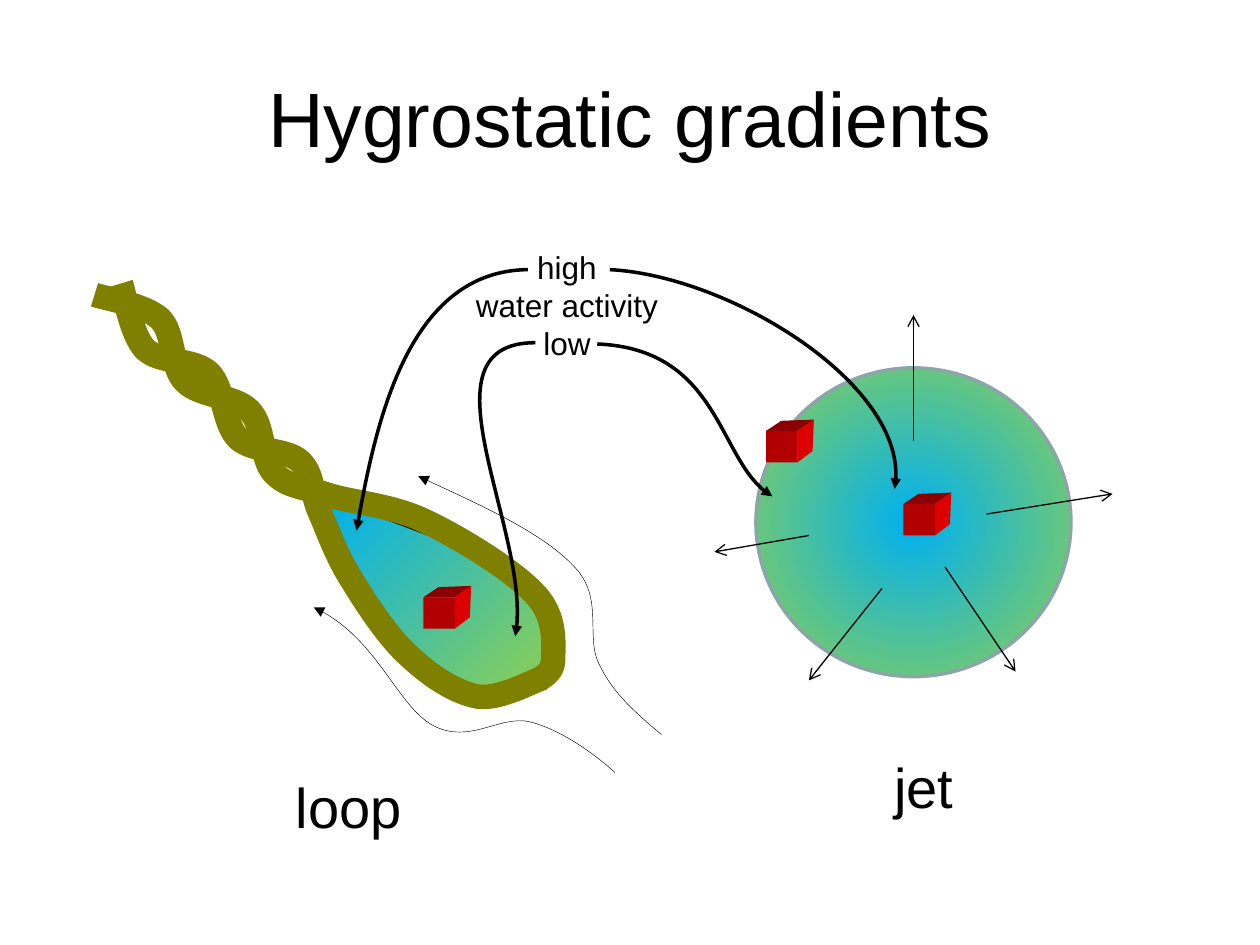
from dataclasses import dataclass
from typing import Optional

from pptx import Presentation
from pptx.dml.color import RGBColor
from pptx.enum.shapes import MSO_CONNECTOR as Connector, MSO_SHAPE as Preset
from pptx.enum.text import MSO_ANCHOR as Anchor, MSO_AUTO_SIZE as AutoSize, PP_ALIGN as Align
from pptx.oxml import parse_xml
from pptx.oxml.ns import nsdecls, qn
from pptx.oxml.xmlchemy import OxmlElement
from pptx.util import Inches, Pt

# Grid of 10 columns by 7.5 rows with square cells
COLUMNS, ROWS = 10, 7.5
CELL = Inches(1)
FONT = "Arial"
BLACK, ROPE, RIM = "000000", "808000", "8AA6A8"
WET, DRY = "00B0F0", "92D050"
CUBE_SIDE = 0.25


@dataclass
class Curve:
    """A start point followed by cubic segments, three points each."""
    points: list
    width: float
    colour: str = BLACK
    head: Optional[str] = None
    closed: bool = False


@dataclass
class Face:
    colour: str
    corners: list


def cells(count: float) -> int:
    return round(count * CELL)


def paint(colour: str) -> RGBColor:
    return RGBColor.from_string(colour)


def style_line(shape, colour: str, width: float, head: Optional[str] = None) -> None:
    shape.line.color.rgb = paint(colour)
    shape.line.width = Pt(width)
    if head:
        end = OxmlElement("a:tailEnd")
        end.set("type", head)
        shape.line._get_or_add_ln().append(end)


def fill_gradient(shape, radial: bool = False) -> None:
    shape.fill.gradient()
    for stop, colour, position in zip(shape.fill.gradient_stops, (WET, DRY), (0, 1)):
        stop.color.rgb = paint(colour)
        stop.position = position
    shape.fill.gradient_angle = 315
    if radial:
        linear = next(shape._element.iter(qn("a:lin")))
        centre = parse_xml(
            f'<a:path {nsdecls("a")} path="circle">'
            '<a:fillToRect l="50000" t="50000" r="50000" b="50000"/></a:path>')
        linear.getparent().replace(linear, centre)


def bezier(ends: list, t: float) -> float:
    a, b, c, d = ends
    u = 1 - t
    return a * u**3 + 3 * b * u * u * t + 3 * c * u * t * t + d * t**3


def extent(points: list, axis: int) -> tuple:
    """Lowest and highest value the curve reaches along one axis."""
    values = [bezier([p[axis] for p in points[i:i + 4]], step / 40)
              for i in range(0, len(points) - 1, 3) for step in range(41)]
    return min(values), max(values)


def add_outline(shapes, points: list, closed: bool):
    corners = [(cells(x), cells(y)) for x, y in points]
    builder = shapes.build_freeform(*corners[0])
    builder.add_line_segments(corners[1:], close=closed)
    shape = builder.convert_to_shape()
    shape.shadow.inherit = False
    return shape


def add_curve(shapes, curve: Curve):
    shape = add_outline(shapes, curve.points, curve.closed)
    outline = next(shape._element.iter(qn("a:path")))
    # Every three straight segments become one cubic segment
    straight = outline.findall(qn("a:lnTo"))
    for i in range(0, len(straight), 3):
        cubic = OxmlElement("a:cubicBezTo")
        straight[i].addprevious(cubic)
        for segment in straight[i:i + 3]:
            cubic.append(segment[0])
            outline.remove(segment)
    # The frame fits the curve rather than its control points
    (left, right), (top, bottom) = (extent(curve.points, axis) for axis in (0, 1))
    shift_x, shift_y = shape.left - cells(left), shape.top - cells(top)
    for point in outline.iter(qn("a:pt")):
        point.set("x", str(int(point.get("x")) + shift_x))
        point.set("y", str(int(point.get("y")) + shift_y))
    shape.left, shape.top = cells(left), cells(top)
    shape.width, shape.height = cells(right - left), cells(bottom - top)
    outline.set("w", str(shape.width))
    outline.set("h", str(shape.height))
    shape.fill.background()
    style_line(shape, curve.colour, curve.width, curve.head)
    return shape


def add_arrow(shapes, start: tuple, end: tuple) -> None:
    arrow = shapes.add_connector(Connector.STRAIGHT, *map(cells, start + end))
    style_line(arrow, BLACK, 0.75, "arrow")
    arrow._element.spPr.append(OxmlElement("a:effectLst"))


def add_cube(shapes, left: float, top: float) -> None:
    front = shapes.add_shape(Preset.RECTANGLE, *map(cells, (left, top, CUBE_SIDE, CUBE_SIDE)))
    front.shadow.inherit = False
    front.fill.solid()
    front.fill.fore_color.rgb = paint("B20000")
    front.line.fill.background()
    for face in CUBE_FACES:
        side = add_outline(shapes, [(left + x, top + y) for x, y in face.corners], True)
        side.fill.solid()
        side.fill.fore_color.rgb = paint(face.colour)
        side.line.fill.background()


def write(frame, text: str, *, size: float, align=Align.LEFT) -> None:
    frame.text = text
    for paragraph in frame.paragraphs:
        paragraph.alignment = align
        paragraph.font.name = FONT
        paragraph.font.size = Pt(size)
        paragraph.font.color.rgb = paint(BLACK)


def add_label(shapes, text: str, box: tuple, **text_format) -> None:
    frame = shapes.add_textbox(*map(cells, box)).text_frame
    write(frame, text, **text_format)
    frame.word_wrap = False
    frame.auto_size = AutoSize.SHAPE_TO_FIT_TEXT


CUBE_FACES = [
    Face("8B0000", [(0, 0), (0.12, -0.08), (0.38, -0.09), (0.25, 0)]),
    Face("DD0000", [(0.25, 0), (0.38, -0.09), (0.37, 0.16), (0.25, 0.25)]),
]
LOOP_INSIDE = Curve([
    (3.8, 4.42), (4.06, 4.56), (4.24, 4.69), (4.34, 4.83), (4.43, 4.98), (4.44, 5.18),
    (4.38, 5.29), (4.32, 5.39), (4.1, 5.44), (3.97, 5.46), (3.83, 5.49), (3.71, 5.48),
    (3.56, 5.42), (3.4, 5.36), (3.21, 5.3), (3.06, 5.1), (2.91, 4.91), (2.74, 4.42),
    (2.66, 4.23), (2.59, 4.05), (2.59, 4.03), (2.61, 3.99), (2.62, 3.95), (2.58, 3.95),
    (2.78, 4.02), (2.98, 4.09), (3.54, 4.29), (3.8, 4.42)], 0.75, closed=True)
STRANDS = [
    Curve([(4.26, 5.41), (4.28, 5.38), (4.39, 5.35), (4.39, 5.24), (4.39, 5.12), (4.42, 4.9),
           (4.25, 4.72), (4.08, 4.53), (3.64, 4.26), (3.36, 4.13), (3.08, 4), (2.78, 3.99),
           (2.58, 3.92), (2.38, 3.86), (2.27, 3.86), (2.17, 3.75), (2.07, 3.64), (2.1, 3.38),
           (1.98, 3.26), (1.87, 3.14), (1.59, 3.15), (1.47, 3.03), (1.35, 2.91), (1.39, 2.65),
           (1.27, 2.53), (1.15, 2.42), (0.84, 2.37), (0.75, 2.34)], 14, ROPE),
    Curve([(4.31, 5.38), (4.22, 5.41), (3.97, 5.55), (3.8, 5.53), (3.62, 5.5), (3.42, 5.37),
           (3.25, 5.21), (3.08, 5.06), (2.9, 4.78), (2.79, 4.6), (2.67, 4.41), (2.61, 4.23),
           (2.54, 4.07), (2.47, 3.92), (2.49, 3.76), (2.38, 3.66), (2.27, 3.56), (2.01, 3.59),
           (1.89, 3.48), (1.77, 3.36), (1.78, 3.08), (1.66, 2.96), (1.53, 2.84), (1.27, 2.89),
           (1.15, 2.77), (1.04, 2.65), (0.99, 2.34), (0.96, 2.25)], 14, ROPE),
]
FLOWS = [Curve(points, 0.25, head="triangle") for points in (
    [(5.25, 5.83), (5.06, 5.67), (4.87, 5.51), (4.76, 5.28), (4.64, 5.06), (4.8, 4.75),
     (4.56, 4.5), (4.32, 4.24), (3.82, 4.01), (3.32, 3.78)],
    [(4.88, 6.13), (4.69, 5.96), (4.44, 5.79), (4.21, 5.73), (3.97, 5.67), (3.73, 5.91),
     (3.44, 5.76), (3.16, 5.61), (2.99, 5.05), (2.49, 4.82)])]
JET_ARROWS = [((6.42, 4.25), (5.67, 4.38)), ((7.25, 3.5), (7.25, 2.5)),
              ((7.83, 4.08), (8.83, 3.92)), ((7.5, 4.5), (8.06, 5.33)),
              ((7, 4.67), (6.42, 5.4))]
HIGH_POINTERS, LOW_POINTERS = (
    [Curve(points, 2, head="triangle") for points in pair] for pair in (
        ([(4.19, 2.14), (3.24, 2.15), (2.97, 3.42), (2.83, 4.21)],
         [(4.84, 2.14), (5.79, 2.19), (7.25, 3.09), (7.1, 3.88)]),
        ([(4.25, 2.72), (3.3, 2.72), (4.24, 4.26), (4.09, 5.05)],
         [(4.74, 2.73), (5.69, 2.77), (5.7, 3.69), (6.13, 3.94)])))


def main() -> None:
    deck = Presentation()
    deck.slide_width, deck.slide_height = cells(COLUMNS), cells(ROWS)
    slide = deck.slides.add_slide(deck.slide_layouts[5])
    shapes = slide.shapes

    # Title
    title = shapes.title
    title.left, title.top, title.width, title.height = map(cells, (0.5, 0.3, 9, 1.25))
    write(title.text_frame, "Hygrostatic gradients", size=44, align=Align.CENTER)
    title.text_frame.vertical_anchor = Anchor.MIDDLE

    # Jet droplet
    jet = shapes.add_shape(Preset.OVAL, *map(cells, (6, 2.92, 2.5, 2.45)))
    jet.shadow.inherit = False
    fill_gradient(jet, radial=True)
    style_line(jet, RIM, 2)

    # Twisted loop
    fill_gradient(add_curve(shapes, LOOP_INSIDE))
    rope = shapes.add_group_shape().shapes
    for strand in STRANDS:
        add_curve(rope, strand)

    # Cubes and captions
    for corner in ((3.36, 4.74), (6.08, 3.42), (7.17, 4)):
        add_cube(shapes, *corner)
    add_label(shapes, "loop", (2.25, 6.08, 1.05, 0.64), size=32)
    add_label(shapes, "jet", (7, 5.92, 0.68, 0.64), size=32)

    # Flow around the loop and out of the jet
    motion = shapes.add_group_shape().shapes
    for flow in FLOWS:
        add_curve(motion, flow)
    for start, end in JET_ARROWS:
        add_arrow(motion, start, end)

    # Water activity pointers
    activity = shapes.add_group_shape().shapes
    for pointer in HIGH_POINTERS:
        add_curve(activity, pointer)
    add_label(activity, "high\nwater activity\nlow", (3.67, 1.92, 1.66, 1.01),
              size=18, align=Align.CENTER)
    for pointer in LOW_POINTERS:
        add_curve(activity, pointer)

    deck.save("out.pptx")


if __name__ == "__main__":
    main()
